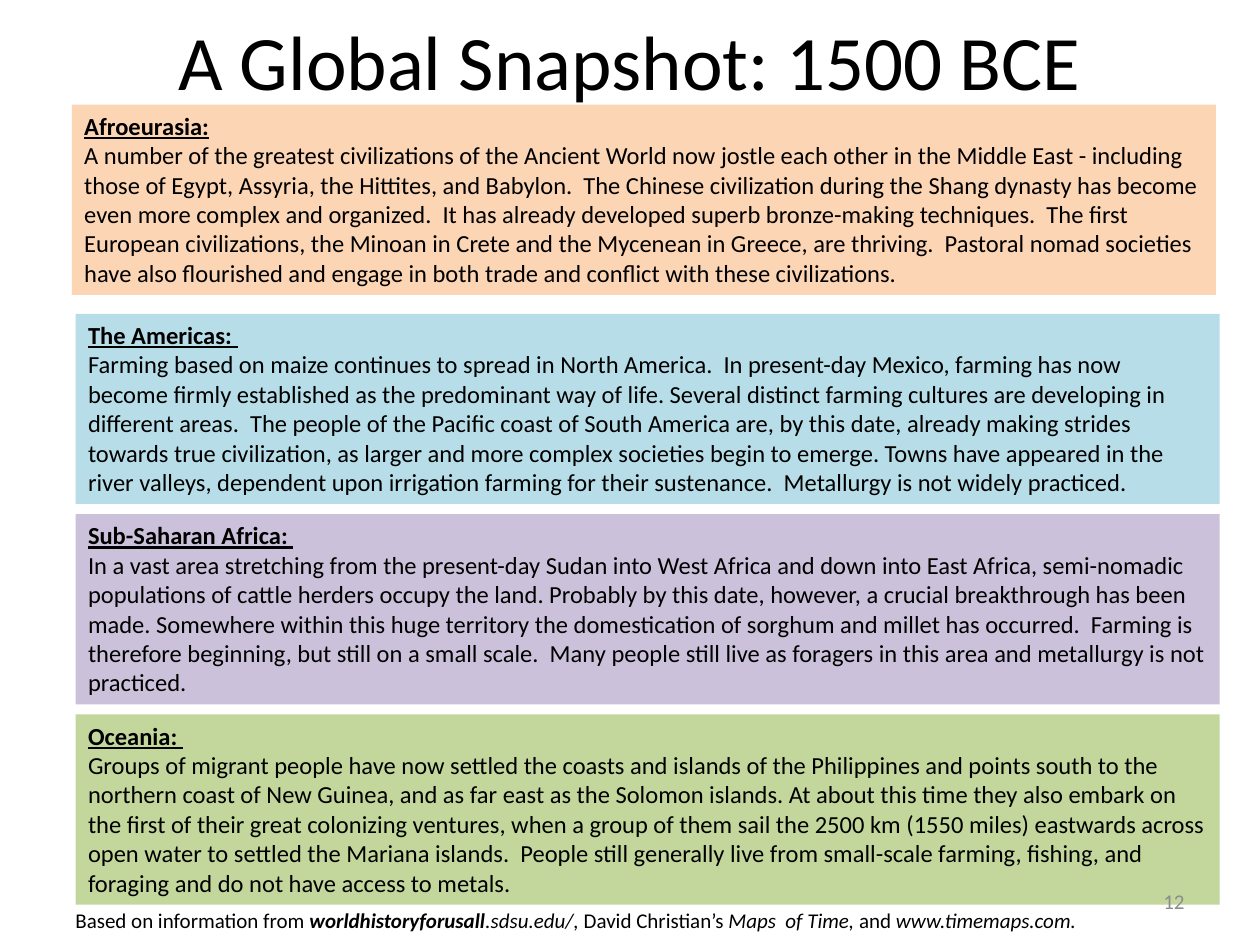
from dataclasses import dataclass

from pptx import Presentation
from pptx.dml.color import RGBColor
from pptx.enum.shapes import MSO_SHAPE
from pptx.enum.text import MSO_ANCHOR, PP_ALIGN
from pptx.util import Inches, Pt


@dataclass(frozen=True)
class Theme:
    font: str = "Calibri"
    ink: str = "000000"
    muted: str = "8C8C8C"
    peach: str = "FCD5B5"
    aqua: str = "B7DEE8"
    lilac: str = "CCC1DA"
    green: str = "C3D69B"
    title_size: int = 44
    body_size: int = 14
    small_size: int = 12


THEME = Theme()
PANEL_WIDTH, PANEL_HEIGHT = 9.08, 1.51

REGIONS = [
    (0.57, 0.83, THEME.peach, "Afroeurasia:",
     "A number of the greatest civilizations of the Ancient World now jostle each other in the "
     "Middle East - including those of Egypt, Assyria, the Hittites, and Babylon.  The Chinese "
     "civilization during the Shang dynasty has become even more complex and organized.  It has "
     "already developed superb bronze-making techniques.  The first European civilizations, the "
     "Minoan in Crete and the Mycenean in Greece, are thriving.  Pastoral nomad societies have "
     "also flourished and engage in both trade and conflict with these civilizations."),
    (0.6, 2.49, THEME.aqua, "The Americas: ",
     "Farming based on maize continues to spread in North America.  In present-day Mexico, "
     "farming has now become firmly established as the predominant way of life. Several distinct "
     "farming cultures are developing in different areas.  The people of the Pacific coast of "
     "South America are, by this date, already making strides towards true civilization, as "
     "larger and more complex societies begin to emerge. Towns have appeared in the river "
     "valleys, dependent upon irrigation farming for their sustenance.  Metallurgy is not widely "
     "practiced."),
    (0.6, 4.08, THEME.lilac, "Sub-Saharan Africa: ",
     "In a vast area stretching from the present-day Sudan into West Africa and down into East "
     "Africa, semi-nomadic populations of cattle herders occupy the land. Probably by this date, "
     "however, a crucial breakthrough has been made. Somewhere within this huge territory the "
     "domestication of sorghum and millet has occurred.  Farming is therefore beginning, but "
     "still on a small scale.  Many people still live as foragers in this area and metallurgy is "
     "not practiced."),
    (0.6, 5.67, THEME.green, "Oceania: ",
     "Groups of migrant people have now settled the coasts and islands of the Philippines and "
     "points south to the northern coast of New Guinea, and as far east as the Solomon islands. "
     "At about this time they also embark on the first of their great colonizing ventures, when "
     "a group of them sail the 2500 km (1550 miles) eastwards across open water to settled the "
     "Mariana islands.  People still generally live from small-scale farming, fishing, and "
     "foraging and do not have access to metals."),
]

SOURCES = [
    ("Based on information from ", False, False),
    ("worldhistoryforusall", True, True),
    (".sdsu.edu/, ", False, True),
    ("David Christian’s ", False, False),
    ("Maps  of Time, ", False, True),
    ("and", False, False),
    (" www.timemaps.com.", False, True),
]


def style_font(font, size, color=THEME.ink):
    font.name = THEME.font
    font.size = Pt(size)
    font.color.rgb = RGBColor.from_string(color)


def add_text_box(slide, box, anchor=MSO_ANCHOR.TOP):
    text_frame = slide.shapes.add_textbox(*map(Inches, box)).text_frame
    text_frame.word_wrap = True
    text_frame.vertical_anchor = anchor
    return text_frame


def add_line(slide, box, text, size, color, alignment):
    text_frame = add_text_box(slide, box, MSO_ANCHOR.MIDDLE)
    text_frame.text = text
    paragraph = text_frame.paragraphs[0]
    paragraph.alignment = alignment
    style_font(paragraph.runs[0].font, size, color)


def add_region_panel(slide, box, color, heading, body):
    shape = slide.shapes.add_shape(MSO_SHAPE.RECTANGLE, *map(Inches, box))
    shape.shadow.inherit = False
    shape.fill.solid()
    shape.fill.fore_color.rgb = RGBColor.from_string(color)
    shape.line.fill.background()
    text_frame = shape.text_frame
    text_frame.word_wrap = True
    text_frame.vertical_anchor = MSO_ANCHOR.TOP
    text_frame.text = f"{heading}\n{body}"
    for paragraph in text_frame.paragraphs:
        paragraph.alignment = PP_ALIGN.LEFT
        style_font(paragraph.runs[0].font, THEME.body_size)
    heading_font = text_frame.paragraphs[0].runs[0].font
    heading_font.bold = True
    heading_font.underline = True


def add_sources(slide, box):
    paragraph = add_text_box(slide, box).paragraphs[0]
    for text, bold, italic in SOURCES:
        run = paragraph.add_run()
        run.text = text
        style_font(run.font, THEME.small_size)
        run.font.bold = bold
        run.font.italic = italic


def main():
    presentation = Presentation()
    presentation.slide_width = Inches(10)
    presentation.slide_height = Inches(7.5)
    slide = presentation.slides.add_slide(presentation.slide_layouts[6])
    add_line(slide, (0.5, 0, 9, 0.95), "A Global Snapshot: 1500 BCE",
             THEME.title_size, THEME.ink, PP_ALIGN.CENTER)
    for left, top, color, heading, body in REGIONS:
        add_region_panel(slide, (left, top, PANEL_WIDTH, PANEL_HEIGHT), color, heading, body)
    add_line(slide, (7.17, 6.95, 2.33, 0.4), "12",
             THEME.small_size, THEME.muted, PP_ALIGN.RIGHT)
    add_sources(slide, (0.5, 7.15, 8.75, 0.3))
    presentation.save("out.pptx")


if __name__ == "__main__":
    main()
